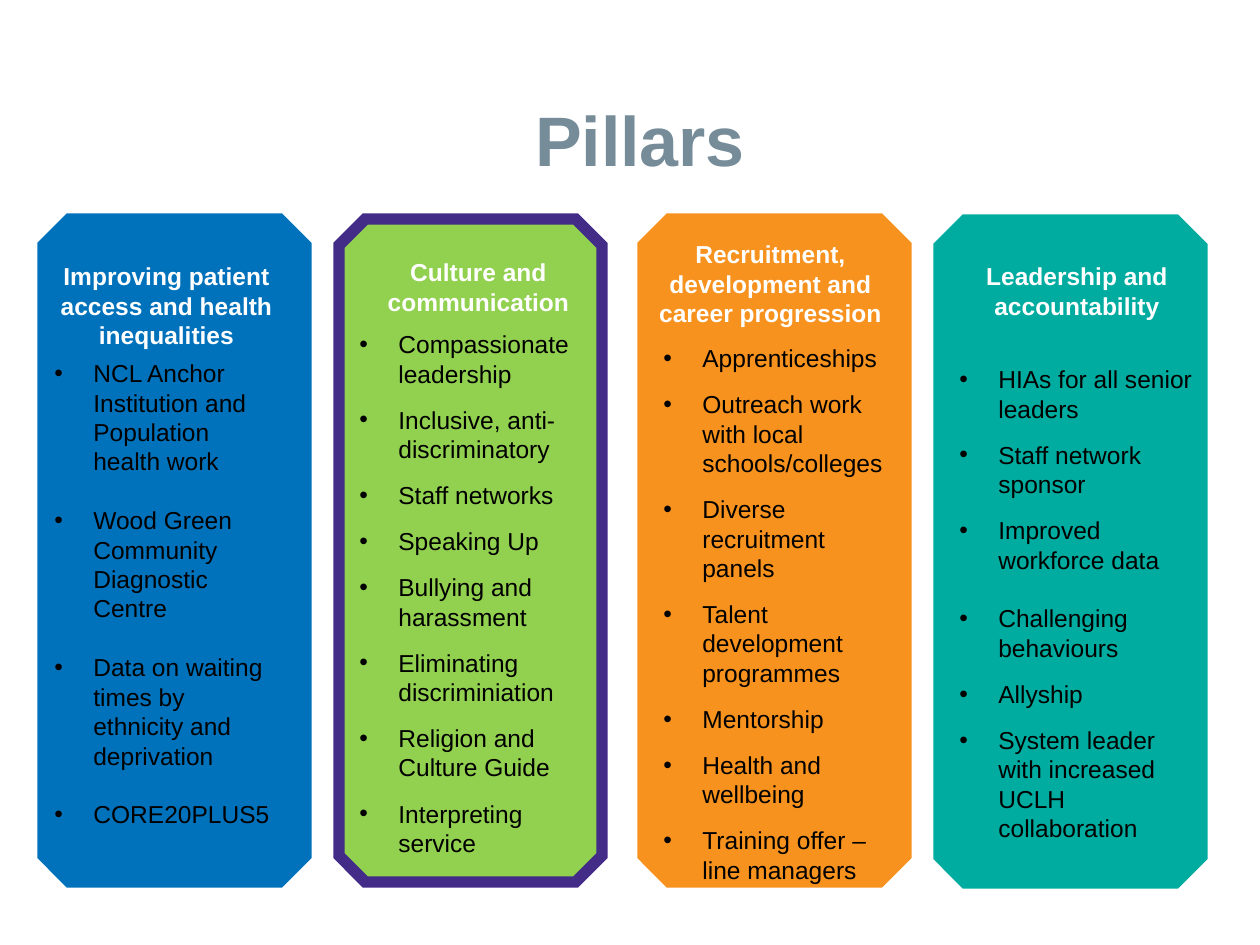
from dataclasses import dataclass

from lxml import etree
from pptx import Presentation
from pptx.dml.color import RGBColor
from pptx.enum.shapes import MSO_SHAPE as Shape
from pptx.enum.text import MSO_AUTO_SIZE as AutoSize, PP_ALIGN as Align
from pptx.oxml.ns import qn
from pptx.util import Emu, Pt

EMU_PER_PX = 914400 / 126
FONT = "Arial"
BODY_SIZE = 14
INDENT = 39
SMALL_GAP = 9.5
LINE_GAP = 16.8

WHITE = RGBColor(0xFF, 0xFF, 0xFF)
BLACK = RGBColor(0x00, 0x00, 0x00)
SLATE = RGBColor(0x76, 0x8C, 0x99)
BLUE = RGBColor(0x00, 0x72, 0xBC)
GREEN = RGBColor(0x92, 0xD0, 0x50)
PURPLE = RGBColor(0x42, 0x2C, 0x88)
ORANGE = RGBColor(0xF7, 0x92, 0x1E)
TEAL = RGBColor(0x00, 0xAC, 0xA0)


def px(length):
    return Emu(round(length * EMU_PER_PX))


@dataclass
class Pillar:
    panel: tuple
    fill: RGBColor
    border: RGBColor
    heading: str
    heading_box: tuple
    points: list
    points_box: tuple
    gap: float = SMALL_GAP
    wide_gap_before: str = ""


class Board:
    def __init__(self, slide):
        self.slide = slide

    def style(self, paragraph, size, color, bold=False):
        font = paragraph.font
        font.name, font.size, font.bold = FONT, Pt(size), bold
        font.color.rgb = color

    def panel(self, box, fill, border):
        panel = self.slide.shapes.add_shape(Shape.SNIP_2_DIAG_RECTANGLE, *map(px, box))
        panel.adjustments[0], panel.adjustments[1] = 0.1, 0.1
        panel.shadow.inherit = False
        panel.fill.solid()
        panel.fill.fore_color.rgb = fill
        panel.line.color.rgb = border
        panel.line.width = Pt(6.5)
        outline = panel.line._get_or_add_ln()
        etree.SubElement(outline, qn("a:miter"), lim="800000")

    def frame(self, box):
        frame = self.slide.shapes.add_textbox(*map(px, box)).text_frame
        frame.word_wrap = True
        frame.auto_size = AutoSize.SHAPE_TO_FIT_TEXT
        return frame

    def heading(self, text, box, size, color):
        paragraph = self.frame(box).paragraphs[0]
        paragraph.text = text
        paragraph.alignment = Align.CENTER
        self.style(paragraph, size, color, bold=True)

    def bullets(self, points, box, gap, wide_gap_before):
        frame = self.frame(box)
        for index, point in enumerate(points):
            paragraph = frame.add_paragraph() if index else frame.paragraphs[0]
            paragraph.text = point
            if index:
                paragraph.space_before = Pt(LINE_GAP if point == wide_gap_before else gap)
            properties = paragraph._p.get_or_add_pPr()
            properties.set("marL", str(px(INDENT)))
            properties.set("indent", str(-px(INDENT)))
            etree.SubElement(properties, qn("a:buFont"), typeface=FONT)
            etree.SubElement(properties, qn("a:buChar"), char="•")
            self.style(paragraph, BODY_SIZE, BLACK)


PILLARS = [
    Pillar((43, 219, 263, 663), BLUE, BLUE,
           "Improving patient access and health inequalities", (43, 255, 247, 102),
           ["NCL Anchor Institution and Population health work",
            "Wood Green Community Diagnostic Centre",
            "Data on waiting times by ethnicity and deprivation",
            "CORE20PLUS5"],
           (42, 352, 241, 490), gap=LINE_GAP),
    Pillar((339, 219, 263, 663), GREEN, PURPLE,
           "Culture and communication", (355, 251, 247, 72),
           ["Compassionate leadership", "Inclusive, anti-discriminatory",
            "Staff networks", "Speaking Up", "Bullying and harassment",
            "Eliminating discriminiation", "Religion and Culture Guide",
            "Interpreting service"],
           (347, 323, 256, 548)),
    Pillar((643, 219, 263, 663), ORANGE, ORANGE,
           "Recruitment, development and career progression", (644, 233, 253, 102),
           ["Apprenticeships", "Outreach work with local schools/colleges",
            "Diverse recruitment panels", "Talent development programmes",
            "Mentorship", "Health and wellbeing", "Training offer – line managers"],
           (651, 337, 247, 560)),
    Pillar((939, 220, 263, 663), TEAL, TEAL,
           "Leadership and accountability", (963, 255, 228, 72),
           ["HIAs for all senior leaders", "Staff network sponsor",
            "Improved workforce data", "Challenging behaviours", "Allyship",
            "System leader with increased UCLH collaboration"],
           (947, 358, 263, 500), wide_gap_before="Challenging behaviours"),
]


def main():
    deck = Presentation()
    deck.slide_width, deck.slide_height = px(1260), px(945)
    board = Board(deck.slides.add_slide(deck.slide_layouts[6]))
    for pillar in PILLARS:
        board.panel(pillar.panel, pillar.fill, pillar.border)
    for pillar in PILLARS:
        board.heading(pillar.heading, pillar.heading_box, BODY_SIZE, WHITE)
    board.heading("Pillars", (427, 90, 426, 97), 40, SLATE)
    for pillar in PILLARS:
        board.bullets(pillar.points, pillar.points_box, pillar.gap, pillar.wide_gap_before)
    deck.save("out.pptx")


if __name__ == "__main__":
    main()
